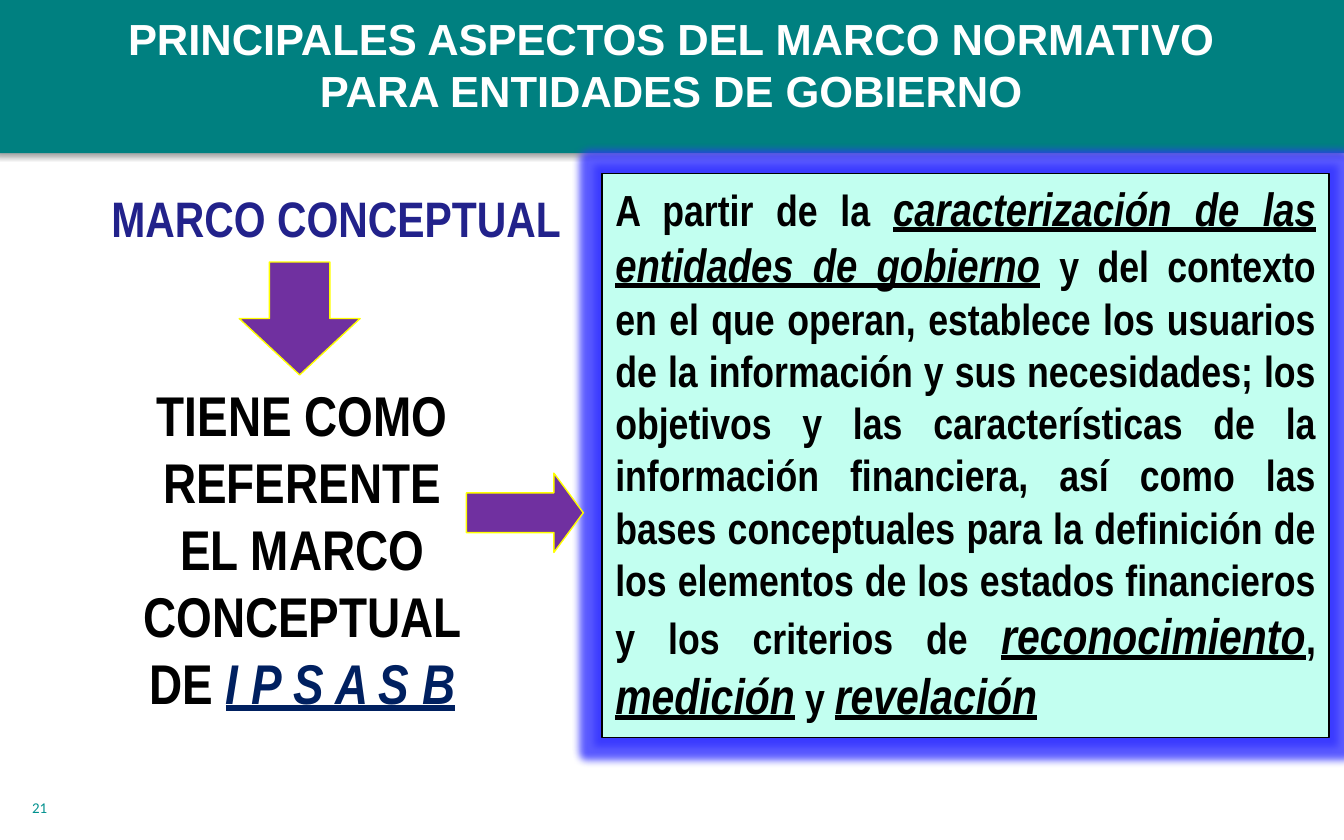
from dataclasses import dataclass
from lxml.etree import SubElement
from pptx import Presentation
from pptx.dml.color import RGBColor
from pptx.enum.shapes import MSO_SHAPE
from pptx.enum.text import MSO_ANCHOR, PP_ALIGN
from pptx.oxml.ns import qn
from pptx.util import Inches, Pt


@dataclass(frozen=True)
class Theme:
    teal: str = "008080"
    mint: str = "C2FFF0"
    purple: str = "7030A0"
    yellow: str = "FFFF00"
    black: str = "000000"
    white: str = "FFFFFF"
    indigo: str = "22228B"
    navy: str = "002060"
    page: str = "00918E"
    glow: str = "3333FF"
    sans: str = "Arial"
    narrow: str = "Arial Narrow"
    small: str = "Calibri"
    note: float = 8
    body: float = 23.3
    term: float = 25
    key: float = 26.7
    lead: float = 30


class Deck:
    cols, rows = 100, 62.5

    def __init__(self, theme):
        self.theme = theme
        self.deck = Presentation()
        self.deck.slide_width = Inches(10)
        self.deck.slide_height = Inches(6.25)
        self.slide = self.deck.slides.add_slide(self.deck.slide_layouts[6])

    def place(self, x, y, w, h):
        col = self.deck.slide_width / self.cols
        row = self.deck.slide_height / self.rows
        return round(x * col), round(y * row), round(w * col), round(h * row)

    def shape(self, kind, spot, fill, line=None, adjust=()):
        item = self.slide.shapes.add_shape(kind, *self.place(*spot))
        item.shadow.inherit = False
        item.fill.solid()
        item.fill.fore_color.rgb = RGBColor.from_string(fill)
        if line:
            item.line.color.rgb = RGBColor.from_string(line)
            item.line.width = Pt(0.75)
        else:
            item.line.fill.background()
        for i, value in enumerate(adjust):
            item.adjustments[i] = value
        return item

    def effect(self, item, tag, color, alpha, **attrs):
        holder = item.element.spPr.find(qn("a:effectLst"))
        node = SubElement(holder, qn(tag), {k: str(v) for k, v in attrs.items()})
        tint = SubElement(node, qn("a:srgbClr"), val=color)
        SubElement(tint, qn("a:alpha"), val=str(alpha * 1000))

    def arrow(self, kind, spot, adjust=()):
        return self.shape(kind, spot, self.theme.purple, self.theme.yellow, adjust)

    def label(self, spot, runs, **look):
        box = self.slide.shapes.add_textbox(*self.place(*spot))
        self.letter(box, runs, **look)

    def letter(self, item, runs, size, face, color, align=PP_ALIGN.LEFT, bold=True):
        frame = item.text_frame
        frame.word_wrap = True
        frame.vertical_anchor = MSO_ANCHOR.TOP
        para = frame.paragraphs[0]
        para.alignment = align
        para.font.name, para.font.bold, para.font.size = face, bold, Pt(size)
        para.font.color.rgb = RGBColor.from_string(color)
        for text, *mark in runs:
            if text == "\n":
                para.add_line_break()
                continue
            run = para.add_run()
            run.text = text
            font = run.font
            if mark:
                scale, tint, slant = mark
                font.size = Pt(scale)
                font.color.rgb = RGBColor.from_string(tint)
                if slant:
                    font.italic = font.underline = True
            else:
                font.color.rgb = RGBColor.from_string(color)


def main():
    t = Theme()
    deck = Deck(t)

    band = deck.shape(MSO_SHAPE.RECTANGLE, (-0.4, -0.2, 100.4, 11.6), t.teal)
    deck.effect(band, "a:outerShdw", t.black, 38,
                blurRad=Pt(3.1), dist=Pt(1.6), dir=5400000)
    deck.label((1.4, 58.9, 20.8, 3), [("21",)],
               size=t.note, face=t.small, color=t.page, bold=False)

    def term(text, size=t.key):
        return text, size, t.black, True

    panel = deck.shape(MSO_SHAPE.RECTANGLE, (44.8, 12.9, 54.1, 42), t.mint, t.black)
    deck.effect(panel, "a:glow", t.glow, 80, rad=Pt(8))
    deck.letter(panel, [
        ("A partir de la ",),
        term("caracterización de las entidades de gobierno", t.term),
        (" ", t.term, t.black, False),
        ("y del contexto en el que operan, establece los usuarios de la "
         "información y sus necesidades; los objetivos y las características "
         "de la información financiera, así como las bases conceptuales para "
         "la definición de los elementos de los estados financieros y los "
         "criterios de ",),
        term("reconocimiento"),
        (", ",),
        term("medición"),
        (" y ",),
        term("revelación"),
    ], size=t.body, face=t.narrow, color=t.black, align=PP_ALIGN.JUSTIFY)

    deck.label((8.7, 27.8, 27.6, 26.3), [
        ("TIENE COMO REFERENTE EL MARCO CONCEPTUAL DE ",),
        ("I P S A S B", t.lead, t.navy, True),
    ], size=t.lead, face=t.narrow, color=t.black, align=PP_ALIGN.CENTER)
    deck.label((7.3, 13.5, 38.8, 5.5), [("MARCO CONCEPTUAL",)],
               size=t.key, face=t.narrow, color=t.indigo)
    deck.label((8.3, 0.4, 83.3, 8.9), [
        ("PRINCIPALES ASPECTOS DEL MARCO NORMATIVO",),
        ("\n",),
        ("PARA ENTIDADES DE GOBIERNO",),
    ], size=t.body, face=t.sans, color=t.white, align=PP_ALIGN.CENTER)

    deck.arrow(MSO_SHAPE.DOWN_ARROW, (17.8, 19.5, 9, 8.4))
    deck.arrow(MSO_SHAPE.RIGHT_ARROW, (34.7, 35.2, 8.7, 5.9), (0.5, 0.37))
    deck.deck.save("out.pptx")


if __name__ == "__main__":
    main()
